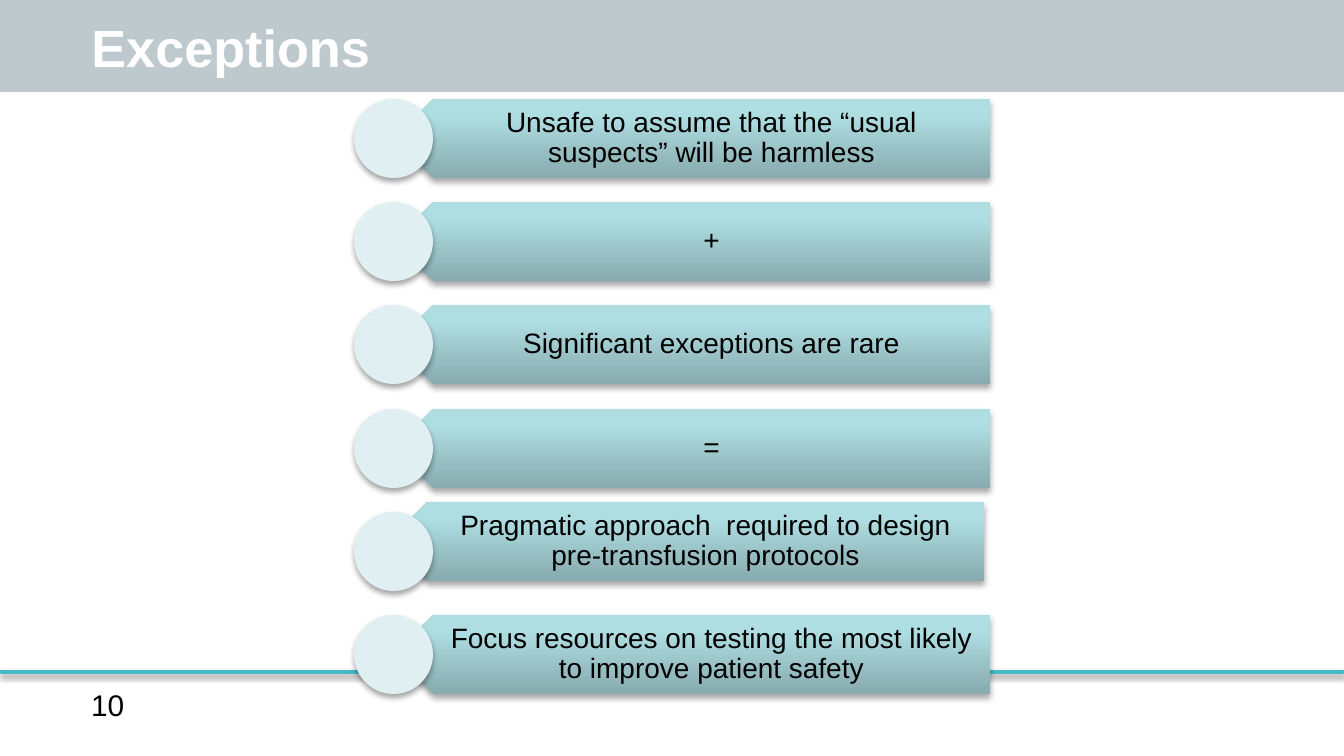
import pptx
import pptx.dml.color
import pptx.enum.shapes
import pptx.enum.text
import pptx.oxml
import pptx.oxml.ns
import pptx.util

RGB = pptx.dml.color.RGBColor
SHAPE = pptx.enum.shapes.MSO_SHAPE
ALIGN = pptx.enum.text.PP_ALIGN
ANCHOR = pptx.enum.text.MSO_ANCHOR
Pt = pptx.util.Pt
qn = pptx.oxml.ns.qn

EMU_PER_PX = 914400 / 134.4
SLIDE_W, SLIDE_H = 1344, 756

SLATE = RGB(0x46, 0x66, 0x73)
TEAL = RGB(0x46, 0xB9, 0xC6)
PALE = RGB(0xE0, 0xF0, 0xF2)
WHITE = RGB(0xFF, 0xFF, 0xFF)
BLACK = RGB(0x00, 0x00, 0x00)
BAR_STOPS = [
    (0, RGB(0x87, 0xAB, 0xAE)),
    (80, RGB(0xAF, 0xDE, 0xE2)),
    (100, RGB(0xAF, 0xE0, 0xE4)),
]

STEPS = [
    "Unsafe to assume that the “usual suspects” will be harmless",
    "+",
    "Significant exceptions are rare",
    "=",
    "Pragmatic approach  required to design pre-transfusion protocols",
    "Focus resources on testing the most likely to improve patient safety",
]
NUDGES = {4: (-6, -10)}  # the fifth bar sits off the grid


def px(length):
    return round(length * EMU_PER_PX)


def box(*lengths):
    return [px(length) for length in lengths]


def xml(body):
    """Parse one DrawingML element written with the a: prefix."""
    return pptx.oxml.parse_xml(f"<a:root {pptx.oxml.ns.nsdecls('a')}>{body}</a:root>")[0]


def add_shadow(shape, opacity, distance):
    """Drop a soft black shadow straight down; distance is in points."""
    shape._element.spPr.append(xml(
        f'<a:effectLst><a:outerShdw blurRad="{Pt(3.1)}" dist="{Pt(distance)}" '
        'dir="5400000" algn="ctr" rotWithShape="0"><a:srgbClr val="000000">'
        f'<a:alpha val="{opacity * 1000}"/></a:srgbClr></a:outerShdw></a:effectLst>'))


def fill_gradient(shape, stops):
    """Run the stops from the bottom of the shape to its top."""
    gs = "".join(f'<a:gs pos="{pos * 1000}"><a:srgbClr val="{color}"/></a:gs>'
                 for pos, color in stops)
    shape._element.spPr.find(qn("a:prstGeom")).addnext(xml(
        f'<a:gradFill rotWithShape="0"><a:gsLst>{gs}</a:gsLst>'
        '<a:lin ang="16200000" scaled="0"/></a:gradFill>'))


def style_text(frame, text, size, color, align=ALIGN.LEFT, bold=False):
    frame.word_wrap = True
    frame.text = text
    paragraph = frame.paragraphs[0]
    paragraph.alignment = align
    font = paragraph.font
    font.name, font.size, font.bold = "Arial", Pt(size), bold
    font.color.rgb = color
    return paragraph


def add_header(slide, left, top, width, height):
    band = slide.shapes.add_shape(SHAPE.RECTANGLE, *box(left, top, width, height))
    band.shadow.inherit = False
    band.fill.solid()
    band.fill.fore_color.rgb = SLATE
    band.line.fill.background()
    band._element.spPr.find(".//" + qn("a:srgbClr")).append(xml('<a:alpha val="35000"/>'))

    title = slide.shapes.title
    slide.shapes._spTree.append(title._element)  # bring the title above the band
    title.left, title.top, title.width, title.height = box(left + 78, top + 16, 1098, 62)
    style_text(title.text_frame, "Exceptions", 28, WHITE, bold=True)
    title.text_frame.vertical_anchor = ANCHOR.MIDDLE


def add_footer(slide, left, top, width):
    rule = slide.shapes.add_connector(pptx.enum.shapes.MSO_CONNECTOR.STRAIGHT,
                                      *box(left, top, left + width, top))
    rule.line.color.rgb = TEAL
    rule.line.width = Pt(2)
    add_shadow(rule, 38, 1.6)
    number = slide.shapes.add_textbox(*box(left + 78, top + 8, 258, 50))
    style_text(number.text_frame, "10", 16, BLACK)


def add_step(group, text, left, top, width, height, nudge):
    """Place a left-pointing bar, its label and the circle over its tip."""
    dx, dy = nudge
    bar_left, label_left = left + height // 2 + 1, left + 60
    right = left + width

    bar = group.shapes.add_shape(
        SHAPE.PENTAGON, *box(bar_left + dx, top + dy, right - bar_left, height))
    bar._element.spPr.xfrm.set("flipH", "1")
    bar.line.fill.background()
    fill_gradient(bar, BAR_STOPS)
    add_shadow(bar, 35, 1.8)

    label = group.shapes.add_textbox(
        *box(label_left + dx, top + dy, right - label_left, height))
    frame = label.text_frame
    frame.margin_left, frame.margin_top, frame.margin_right, frame.margin_bottom = box(
        35, 8, 16, 8)
    frame.vertical_anchor = ANCHOR.MIDDLE
    style_text(frame, text, 15, BLACK, ALIGN.CENTER).line_spacing = 0.9

    circle = group.shapes.add_shape(SHAPE.OVAL, *box(left, top, height, height))
    circle.fill.solid()
    circle.fill.fore_color.rgb = PALE
    circle.line.fill.background()
    add_shadow(circle, 35, 1.8)


def add_steps(slide, left, top, width, height):
    group = slide.shapes.add_group_shape()
    step_height = 79
    pitch = (height - step_height) / (len(STEPS) - 1)
    for i, text in enumerate(STEPS):
        add_step(group, text, left, top + round(i * pitch), width, step_height,
                 NUDGES.get(i, (0, 0)))


def main():
    deck = pptx.Presentation()
    deck.slide_width, deck.slide_height = box(SLIDE_W, SLIDE_H)
    slide = deck.slides.add_slide(deck.slide_layouts[5])
    add_footer(slide, 0, 672, SLIDE_W)
    add_header(slide, 0, 0, SLIDE_W, 92)
    add_steps(slide, 354, 99, 636, 595)
    deck.save("out.pptx")


if __name__ == "__main__":
    main()
